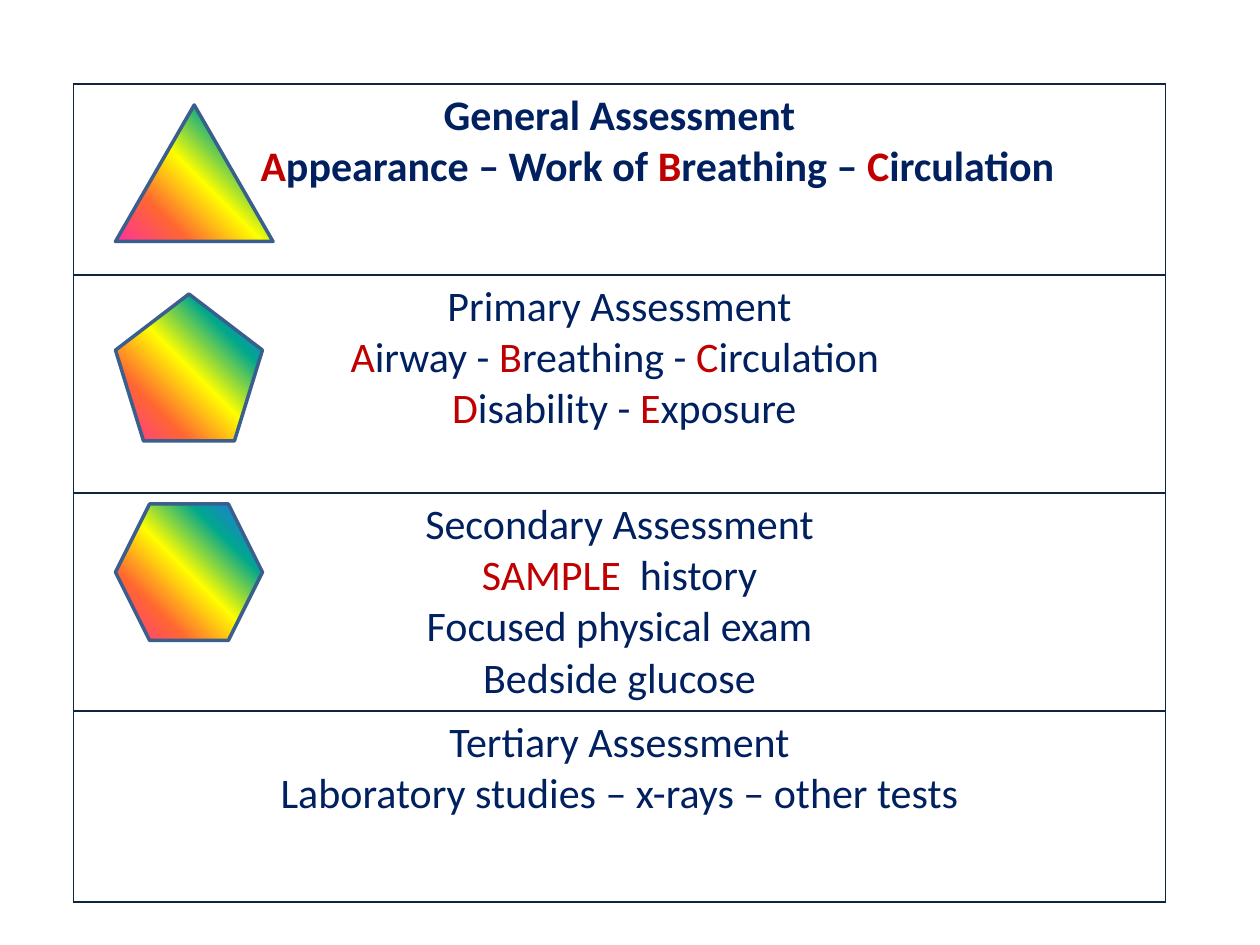
from lxml import etree
from pptx import Presentation
from pptx.dml.color import RGBColor
from pptx.enum import shapes, text
from pptx.oxml import ns
from pptx.util import Pt

COLORS = {"navy": "002060", "red": "C00000", "border": "0F243E", "outline": "3A5F8C"}
RAINBOW = ["FF3399", "FF6633", "FFFF00", "01A78F", "3366FF"]

# Square brackets mark the letters set in red
ASSESSMENTS = [
    ["General Assessment", "[A]ppearance – Work of [B]reathing – [C]irculation"],
    ["Primary Assessment", "[A]irway - [B]reathing - [C]irculation ",
     " [D]isability - [E]xposure"],
    ["Secondary Assessment", "[SAMPLE ] history", "Focused physical exam",
     "Bedside glucose"],
    ["Tertiary Assessment", "Laboratory studies – x-rays – other tests"],
]
ROW_HEIGHTS = [109.2, 124.6, 124.6, 109.2]


def rgb(name):
    return RGBColor.from_string(COLORS[name])


def add_color(parent, value):
    etree.SubElement(parent, ns.qn("a:srgbClr")).set("val", value)


def write_line(paragraph, line, size=24, bold=False, font="Calibri", indent=0):
    """Write a centred line, with bracketed parts in red."""
    paragraph.alignment = text.PP_ALIGN.CENTER
    if indent:
        paragraph._p.get_or_add_pPr().set("marL", str(Pt(indent)))
    for i, part in enumerate(line.replace("]", "[").split("[")):
        if part:
            run = paragraph.add_run()
            run.text = part
            run.font.name, run.font.size, run.font.bold = font, Pt(size), bold
            run.font.color.rgb = rgb("red" if i % 2 else "navy")


class AssessmentSlide:
    def __init__(self, deck):
        self.slide = deck.slides.add_slide(deck.slide_layouts[6])
        self.border_width = 1
        self.outline_width = 2

    def border(self, cell):
        properties = cell._tc.get_or_add_tcPr()
        for i, side in enumerate(("lnL", "lnR", "lnT", "lnB")):
            edge = etree.Element(ns.qn("a:" + side), w=str(Pt(self.border_width)))
            add_color(etree.SubElement(edge, ns.qn("a:solidFill")), COLORS["border"])
            properties.insert(i, edge)

    def table(self, left, top, width, heights, rows):
        grid = self.slide.shapes.add_table(
            len(rows), 1, Pt(left), Pt(top), Pt(width), Pt(sum(heights))).table
        grid.first_row = grid.horz_banding = False
        for i, (height, lines) in enumerate(zip(heights, rows)):
            grid.rows[i].height = Pt(height)
            cell = grid.cell(i, 0)
            cell.fill.background()
            self.border(cell)
            for j, line in enumerate(lines):
                frame = cell.text_frame
                paragraph = frame.add_paragraph() if j else frame.paragraphs[0]
                # The first row is bold; its second line clears the triangle
                write_line(paragraph, line, bold=i == 0,
                           indent=43.4 if (i, j) == (0, 1) else 0)

    def rainbow_shape(self, kind, left, top, width, height):
        symbol = self.slide.shapes.add_shape(
            kind, Pt(left), Pt(top), Pt(width), Pt(height))
        symbol.shadow.inherit = False
        symbol.line.color.rgb = rgb("outline")
        symbol.line.width = Pt(self.outline_width)
        symbol.fill.gradient()
        symbol.fill.gradient_angle = 45
        stops = symbol._element.spPr.find(".//" + ns.qn("a:gsLst"))
        for stop in list(stops):
            stops.remove(stop)
        for i, value in enumerate(RAINBOW):
            add_color(etree.SubElement(stops, ns.qn("a:gs"), pos=str(i * 25000)), value)


def main():
    deck = Presentation()
    deck.slide_width, deck.slide_height = Pt(720), Pt(540)
    page = AssessmentSlide(deck)

    # Assessment steps
    page.table(42, 48, 624, ROW_HEIGHTS, ASSESSMENTS)

    # Symbols: one more side for each step
    kinds = shapes.MSO_SHAPE
    page.rainbow_shape(kinds.FLOWCHART_EXTRACT, 66, 60, 90, 78)
    page.rainbow_shape(kinds.REGULAR_PENTAGON, 66, 168, 84, 84)
    page.rainbow_shape(kinds.HEXAGON, 66, 288, 84, 78)

    deck.save("out.pptx")


if __name__ == "__main__":
    main()
